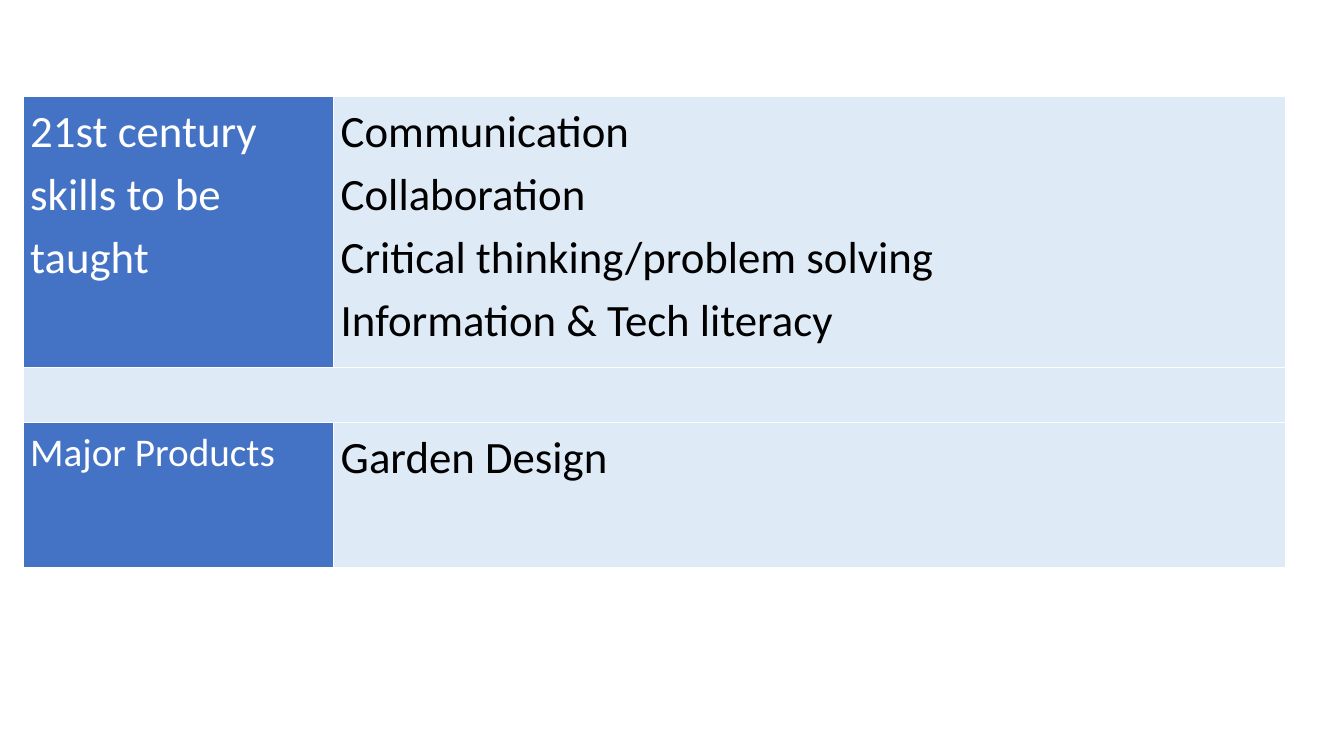
import dataclasses

import lxml.etree
import pptx
import pptx.dml.color
import pptx.oxml.ns
import pptx.table
import pptx.util


@dataclasses.dataclass(frozen=True)
class Theme:
    font: str = "Calibri"
    head: str = "4472C4"
    pale: str = "DEEBF7"
    white: str = "FFFFFF"
    black: str = "000000"
    large: int = 32
    small: int = 28
    rule: int = 1


@dataclasses.dataclass(frozen=True)
class Entry:
    text: str
    fill: str
    color: str
    size: int


THEME = Theme()

# Table grid in inches
LEFT, TOP = 0.23, 0.96
COLS = (3.08, 9.44)
ROWS = (2.69, 0.54, 1.44)
INSET = 0.07
GAP_ROW = 1


def label(text: str, size: int) -> Entry:
    return Entry(text, THEME.head, THEME.white, size)


def detail(text: str) -> Entry:
    return Entry(text, THEME.pale, THEME.black, THEME.large)


SKILLS = "\n".join((
    "Communication",
    "Collaboration",
    "Critical thinking/problem solving",
    "Information & Tech literacy",
))
ENTRIES = (
    (label("21st century skills to be taught", THEME.large), detail(SKILLS)),
    (detail(""), detail("")),
    (label("Major Products", THEME.small), detail("Garden Design")),
)


def rgb(color: str) -> pptx.dml.color.RGBColor:
    return pptx.dml.color.RGBColor.from_string(color)


def add_rules(cell: pptx.table._Cell) -> None:
    """Draw a thin line on each side of a cell."""
    qn = pptx.oxml.ns.qn
    props = cell._tc.get_or_add_tcPr()
    for side in "LRTB":
        line = lxml.etree.SubElement(
            props, qn(f"a:ln{side}"), w=str(pptx.util.Pt(THEME.rule)))
        fill = lxml.etree.SubElement(line, qn("a:solidFill"))
        lxml.etree.SubElement(fill, qn("a:srgbClr"), val=THEME.white)


def fill_cell(cell: pptx.table._Cell, entry: Entry) -> None:
    add_rules(cell)
    cell.fill.solid()
    cell.fill.fore_color.rgb = rgb(entry.fill)
    if not entry.text:
        return
    cell.margin_left = cell.margin_right = pptx.util.Inches(INSET)
    cell.margin_top = cell.margin_bottom = 0
    cell.text_frame.text = entry.text
    for para in cell.text_frame.paragraphs:
        para.line_spacing = 1.15
        for run in para.runs:
            run.font.name = THEME.font
            run.font.size = pptx.util.Pt(entry.size)
            run.font.color.rgb = rgb(entry.color)


def main() -> None:
    deck = pptx.Presentation()
    deck.slide_width = pptx.util.Inches(13.33)
    deck.slide_height = pptx.util.Inches(7.5)
    slide = deck.slides.add_slide(deck.slide_layouts[6])

    # Table frame
    box = (LEFT, TOP, sum(COLS), sum(ROWS))
    table = slide.shapes.add_table(
        len(ROWS), len(COLS), *map(pptx.util.Inches, box)).table
    table.first_row = table.horz_banding = False
    for col, width in zip(table.columns, COLS):
        col.width = pptx.util.Inches(width)
    for row, height in zip(table.rows, ROWS):
        row.height = pptx.util.Inches(height)

    # Cells, with one full-width band between the two topics
    for row, entries in zip(table.rows, ENTRIES):
        for cell, entry in zip(row.cells, entries):
            fill_cell(cell, entry)
    table.cell(GAP_ROW, 0).merge(table.cell(GAP_ROW, len(COLS) - 1))

    deck.save("out.pptx")


if __name__ == "__main__":
    main()
